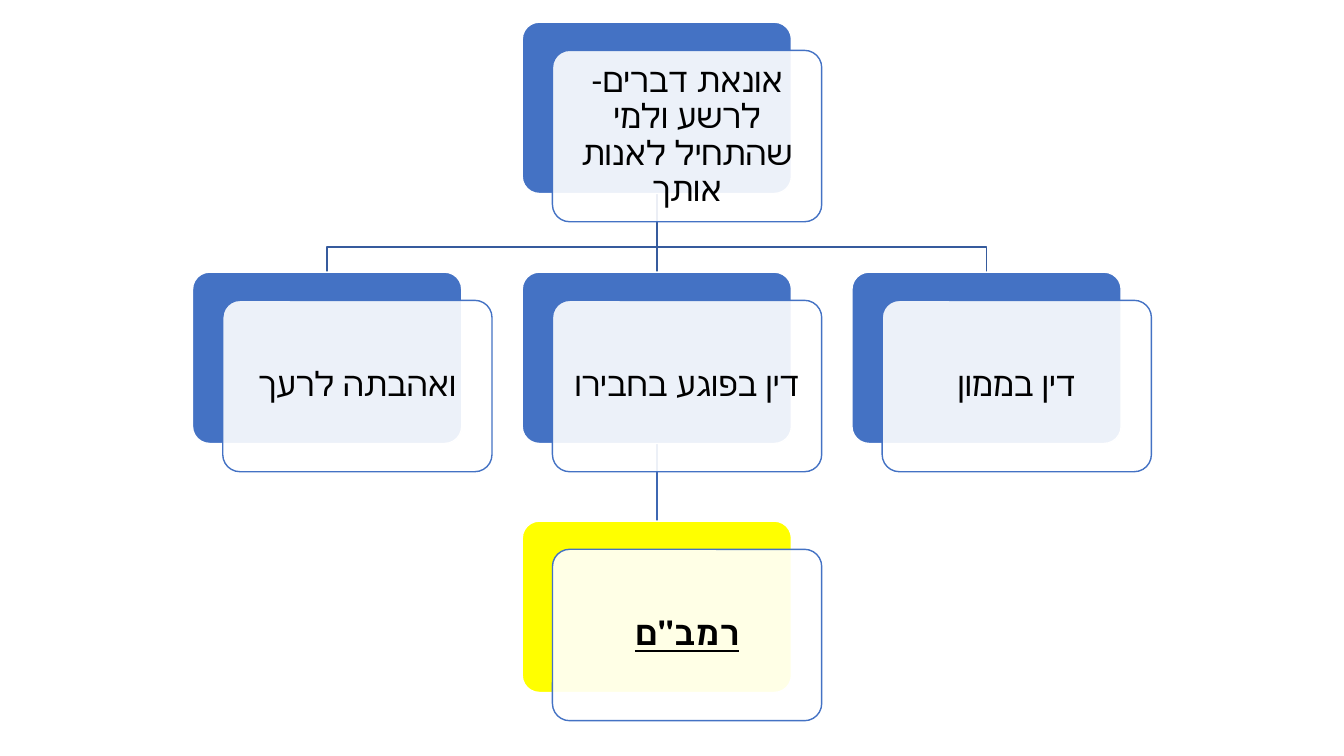
from lxml.etree import SubElement
from pptx import Presentation
from pptx.dml.color import RGBColor
from pptx.enum.lang import MSO_LANGUAGE_ID
from pptx.enum.shapes import MSO_CONNECTOR, MSO_SHAPE
from pptx.enum.text import MSO_ANCHOR, PP_ALIGN
from pptx.oxml.ns import qn
from pptx.util import Inches, Pt

CARD_WIDTH, CARD_HEIGHT = 2.67, 1.7
PANEL_SHIFT_X, PANEL_SHIFT_Y = 0.3, 0.28
FIRST_COLUMN, COLUMN_STEP = 1.91, 3.27
ROW_TOPS = (0.22, 2.7, 5.17)
FORK_DROP = 0.25
BLUE, DARK_BLUE, MID_BLUE = "4472C4", "365B9D", "3E67B2"
WHITE, YELLOW, BLACK = "FFFFFF", "FFFF00", "000000"


def color(hex_code):
    return RGBColor.from_string(hex_code)


def write(frame, text, size=24, font="Calibri", ink=BLACK, bold=False, underline=False):
    frame.word_wrap = True
    frame.vertical_anchor = MSO_ANCHOR.MIDDLE
    frame.margin_left = frame.margin_right = Inches(0.1)
    frame.margin_top = frame.margin_bottom = Inches(0.1)
    paragraph = frame.paragraphs[0]
    paragraph.alignment = PP_ALIGN.CENTER
    paragraph.line_spacing = 0.9
    paragraph.space_after = Pt(size * 0.35)
    paragraph._p.get_or_add_pPr().set("rtl", "1")
    run = paragraph.add_run()
    run.text = text
    run.font.size = Pt(size)
    run.font.name = font
    run.font.bold = bold
    run.font.underline = underline
    run.font.color.rgb = color(ink)
    run.font.language_id = MSO_LANGUAGE_ID.HEBREW


class Hierarchy:
    def __init__(self, slide):
        self.shapes = slide.shapes
        self.line_width = Pt(1)

    def corner(self, column, row):
        return FIRST_COLUMN + column * COLUMN_STEP, ROW_TOPS[row]

    def rounded(self, left, top, fill, outline, opacity=100):
        box = self.shapes.add_shape(
            MSO_SHAPE.ROUNDED_RECTANGLE,
            Inches(left), Inches(top), Inches(CARD_WIDTH), Inches(CARD_HEIGHT),
        )
        box.adjustments[0] = 0.1
        box.shadow.inherit = False
        box.fill.solid()
        box.fill.fore_color.rgb = color(fill)
        if opacity < 100:
            tint = box._element.spPr.find(qn("a:solidFill"))[0]
            SubElement(tint, qn("a:alpha"), val=str(opacity * 1000))
        box.line.color.rgb = color(outline)
        box.line.width = self.line_width
        return box

    def card(self, column, row, text, fill=BLUE, **text_format):
        left, top = self.corner(column, row)
        self.rounded(left, top, fill, WHITE)
        panel = self.rounded(left + PANEL_SHIFT_X, top + PANEL_SHIFT_Y, WHITE, BLUE, opacity=90)
        write(panel.text_frame, text, **text_format)

    def ends(self, parent, child):
        parent_left, parent_top = self.corner(*parent)
        child_left, child_top = self.corner(*child)
        half = CARD_WIDTH / 2
        return (
            Inches(parent_left + half), Inches(parent_top + CARD_HEIGHT),
            Inches(child_left + half), Inches(child_top),
        )

    def stem(self, parent, child, stroke):
        link = self.shapes.add_connector(MSO_CONNECTOR.STRAIGHT, *self.ends(parent, child))
        link.line.color.rgb = color(stroke)
        link.line.width = self.line_width
        SubElement(link._element.spPr, qn("a:effectLst"))

    def branch(self, parent, child, stroke):
        start_x, start_y, end_x, end_y = self.ends(parent, child)
        fork_y = end_y - Inches(FORK_DROP)
        outline = self.shapes.build_freeform(start_x, start_y)
        outline.add_line_segments([(start_x, fork_y), (end_x, fork_y), (end_x, end_y)], close=False)
        elbow = outline.convert_to_shape()
        elbow.shadow.inherit = False
        elbow.fill.background()
        elbow.line.color.rgb = color(stroke)
        elbow.line.width = self.line_width


def main():
    deck = Presentation()
    deck.slide_width, deck.slide_height = Inches(13.33), Inches(7.5)
    tree = Hierarchy(deck.slides.add_slide(deck.slide_layouts[6]))

    verbal_wrong, love, injury, money, rambam = (1, 0), (0, 1), (1, 1), (2, 1), (1, 2)
    tree.branch(verbal_wrong, love, DARK_BLUE)
    tree.stem(injury, rambam, MID_BLUE)
    tree.stem(verbal_wrong, injury, DARK_BLUE)
    tree.branch(verbal_wrong, money, DARK_BLUE)

    tree.card(*verbal_wrong, "אונאת דברים- לרשע ולמי שהתחיל לאנות אותך")
    tree.card(*money, "דין בממון")
    tree.card(*injury, "דין בפוגע בחבירו")
    tree.card(*rambam, 'רמב"ם', fill=YELLOW, bold=True, underline=True)
    tree.card(*love, "ואהבתה לרעך")
    deck.save("out.pptx")


if __name__ == "__main__":
    main()
